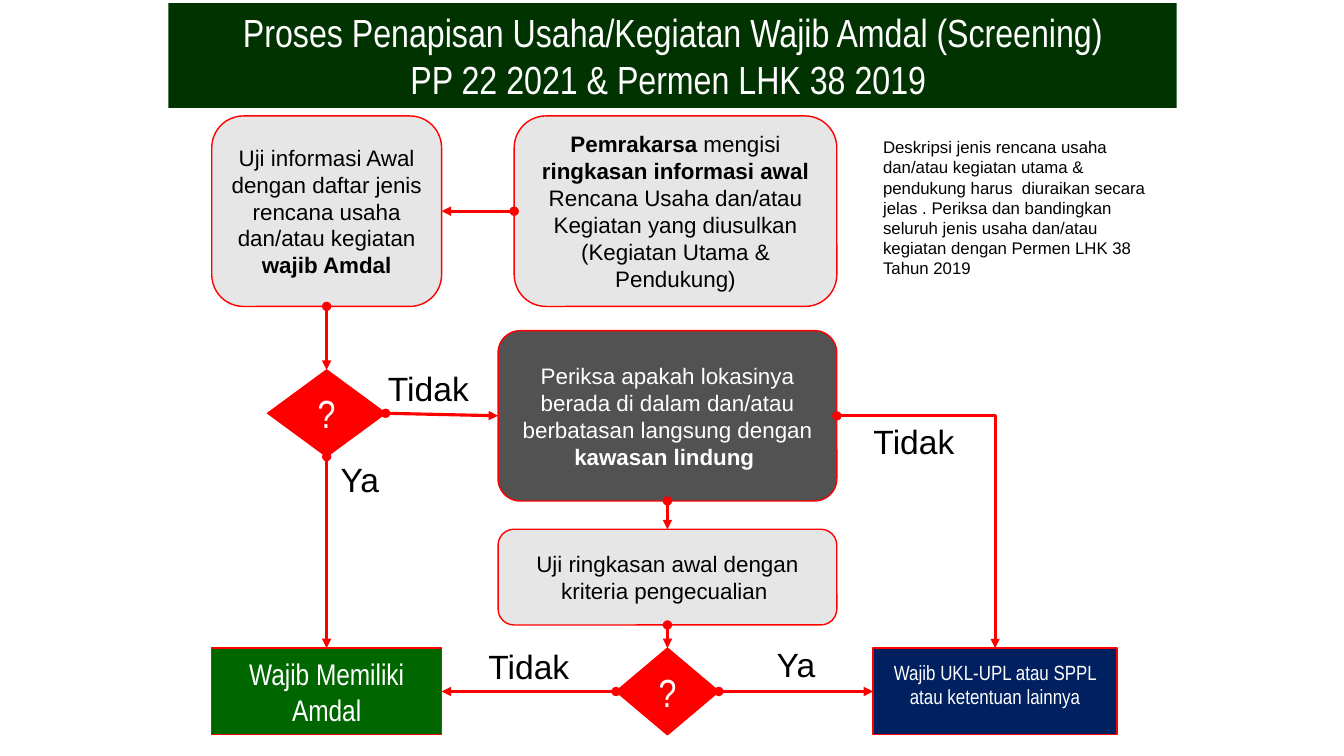
"""Build the flowchart slide on screening activities that require an Amdal."""
from lxml.etree import SubElement
from pptx import Presentation
from pptx.dml.color import RGBColor
from pptx.enum.shapes import MSO_CONNECTOR as Link, MSO_SHAPE as Shape
from pptx.enum.text import MSO_ANCHOR as Anchor, MSO_AUTO_SIZE as AutoSize, PP_ALIGN as Align
from pptx.oxml.ns import qn
from pptx.util import Inches, Pt

COLORS = {"red": "FF0000", "pale": "E7E6E6", "gray": "525252", "green": "006600",
          "forest": "003300", "navy": "002060", "white": "FFFFFF", "black": "000000"}
WIDE, NARROW = "Arial", "Arial Narrow"
TOP, LEFT, BOTTOM, RIGHT = range(4)

TITLE = ["Proses Penapisan Usaha/Kegiatan Wajib Amdal (Screening)",
         "PP 22 2021 & Permen LHK 38 2019 "]
LANES = {"start": 3.24, "check": 6.62, "summary": 6.7, "end": 9.87}
ROWS = {"inform": (1.15, 1.89), "decide": (3.67, 0.86), "locate": (3.28, 1.69),
        "exempt": (5.25, 0.95), "result": (6.43, 0.86)}
STYLES = {"step": (Shape.ROUNDED_RECTANGLE, "pale", "black", WIDE, 16),
          "location": (Shape.ROUNDED_RECTANGLE, "gray", "white", WIDE, 16),
          "choice": (Shape.DIAMOND, "red", "white", NARROW, 28),
          "amdal": (Shape.RECTANGLE, "green", "white", NARROW, 21.3),
          "other": (Shape.RECTANGLE, "navy", "white", NARROW, 14.7)}

# Each run is (text, bold); each box is (style, lane, row, width, runs).
BOXES = {
    "summary": ("step", "summary", "inform", 3.2, [
        ("Pemrakarsa ", True), ("mengisi ", False), ("ringkasan informasi awal ", True),
        ("Rencana Usaha dan/atau Kegiatan yang diusulkan (Kegiatan Utama & Pendukung)", False)]),
    "list test": ("step", "start", "inform", 2.28, [
        ("Uji informasi Awal dengan daftar jenis rencana usaha dan/atau kegiatan ", False),
        ("wajib Amdal", True)]),
    "listed?": ("choice", "start", "decide", 1.17, [("?", False)]),
    "location": ("location", "check", "locate", 3.36, [
        ("Periksa apakah lokasinya berada di dalam dan/atau berbatasan langsung dengan ", False),
        ("kawasan lindung ", True)]),
    "exemption": ("step", "check", "exempt", 3.36, [
        ("Uji ringkasan awal dengan kriteria pengecualian ", False)]),
    "exempt?": ("choice", "check", "result", 1.02, [("?", False)]),
    "amdal": ("amdal", "start", "result", 2.28, [("Wajib Memiliki Amdal", False)]),
    "other": ("other", "end", "result", 2.42, [
        ("Wajib UKL-UPL atau SPPL atau ketentuan lainnya", False)]),
}
ARROWS = [("summary", LEFT, "list test", RIGHT), ("list test", BOTTOM, "listed?", TOP),
          ("listed?", RIGHT, "location", LEFT), ("listed?", BOTTOM, "amdal", TOP),
          ("location", BOTTOM, "exemption", TOP), ("exemption", BOTTOM, "exempt?", TOP),
          ("exempt?", LEFT, "amdal", RIGHT), ("exempt?", RIGHT, "other", LEFT),
          ("location", RIGHT, "other", TOP)]
LABELS = [("Tidak", 3.75, 3.6, Align.LEFT), ("Ya", 3.28, 4.5, Align.LEFT),
          ("Tidak", 4.66, 6.36, Align.CENTER), ("Ya", 7.31, 6.34, Align.CENTER),
          ("Tidak", 8.48, 4.13, Align.CENTER)]
NOTE = ("Deskripsi jenis rencana usaha dan/atau kegiatan utama & pendukung harus  diuraikan "
        "secara jelas . Periksa dan bandingkan seluruh jenis usaha dan/atau kegiatan dengan "
        "Permen LHK 38 Tahun 2019")


def color(name):
    return RGBColor.from_string(COLORS[name])


def write(frame, lines, font, size, ink, align, anchor=Anchor.MIDDLE):
    frame.word_wrap = True
    frame.auto_size = AutoSize.NONE
    frame.vertical_anchor = anchor
    for index, runs in enumerate(lines):
        para = frame.add_paragraph() if index else frame.paragraphs[0]
        para.alignment = align
        for text, bold in runs:
            span = para.add_run()
            span.text = text
            span.font.name, span.font.size, span.font.bold = font, Pt(size), bold
            span.font.color.rgb = color(ink)


def add_title(page):
    title = page.shapes.title
    title.left, title.top, title.width, title.height = map(Inches, (1.67, 0.03, 10, 1.04))
    title.fill.solid()
    title.fill.fore_color.rgb = color("forest")
    write(title.text_frame, [[(line, False)] for line in TITLE], NARROW, 28, "white", Align.CENTER)


def add_box(page, style, lane, row, width, runs):
    kind, fill, ink, font, size = STYLES[style]
    top, height = ROWS[row]
    box = page.shapes.add_shape(
        kind, *map(Inches, (LANES[lane] - width / 2, top, width, height)))
    box.shadow.inherit = False
    box.fill.solid()
    box.fill.fore_color.rgb = color(fill)
    box.line.color.rgb = color("red")
    box.line.width = Pt(1)
    if style == "location":
        box.adjustments[0] = 0.13
    if style == "other":
        box.text_frame.margin_bottom = Inches(0.19)
    write(box.text_frame, [runs], font, size, ink, Align.CENTER)
    return box


def add_arrow(page, source, source_side, target, target_side):
    turns = (source_side - target_side) % 2 == 1
    arrow = page.shapes.add_connector(Link.ELBOW if turns else Link.STRAIGHT, 0, 0, 0, 0)
    arrow.begin_connect(source, source_side)
    arrow.end_connect(target, target_side)
    arrow.line.color.rgb = color("red")
    arrow.line.width = Pt(2.25)
    properties = arrow._element.spPr
    if turns:
        properties.find(qn("a:prstGeom")).set("prst", "bentConnector2")
    line = properties.find(qn("a:ln"))
    SubElement(line, qn("a:headEnd"), type="oval")
    SubElement(line, qn("a:tailEnd"), type="triangle")
    SubElement(properties, qn("a:effectLst"))


def add_text(page, text, left, top, width, height, size, align):
    box = page.shapes.add_textbox(*map(Inches, (left, top, width, height)))
    write(box.text_frame, [[(text, False)]], WIDE, size, "black", align, Anchor.TOP)


def main():
    deck = Presentation()
    deck.slide_width, deck.slide_height = Inches(13.33), Inches(7.5)
    page = deck.slides.add_slide(deck.slide_layouts[5])
    add_title(page)
    boxes = {name: add_box(page, *details) for name, details in BOXES.items()}
    for source, source_side, target, target_side in ARROWS:
        add_arrow(page, boxes[source], source_side, boxes[target], target_side)
    for text, left, top, align in LABELS:
        add_text(page, text, left, top, 1.17, 0.5, 24, align)
    add_text(page, NOTE, 8.66, 1.31, 2.81, 1.51, 12, Align.LEFT)
    deck.save("out.pptx")


if __name__ == "__main__":
    main()
